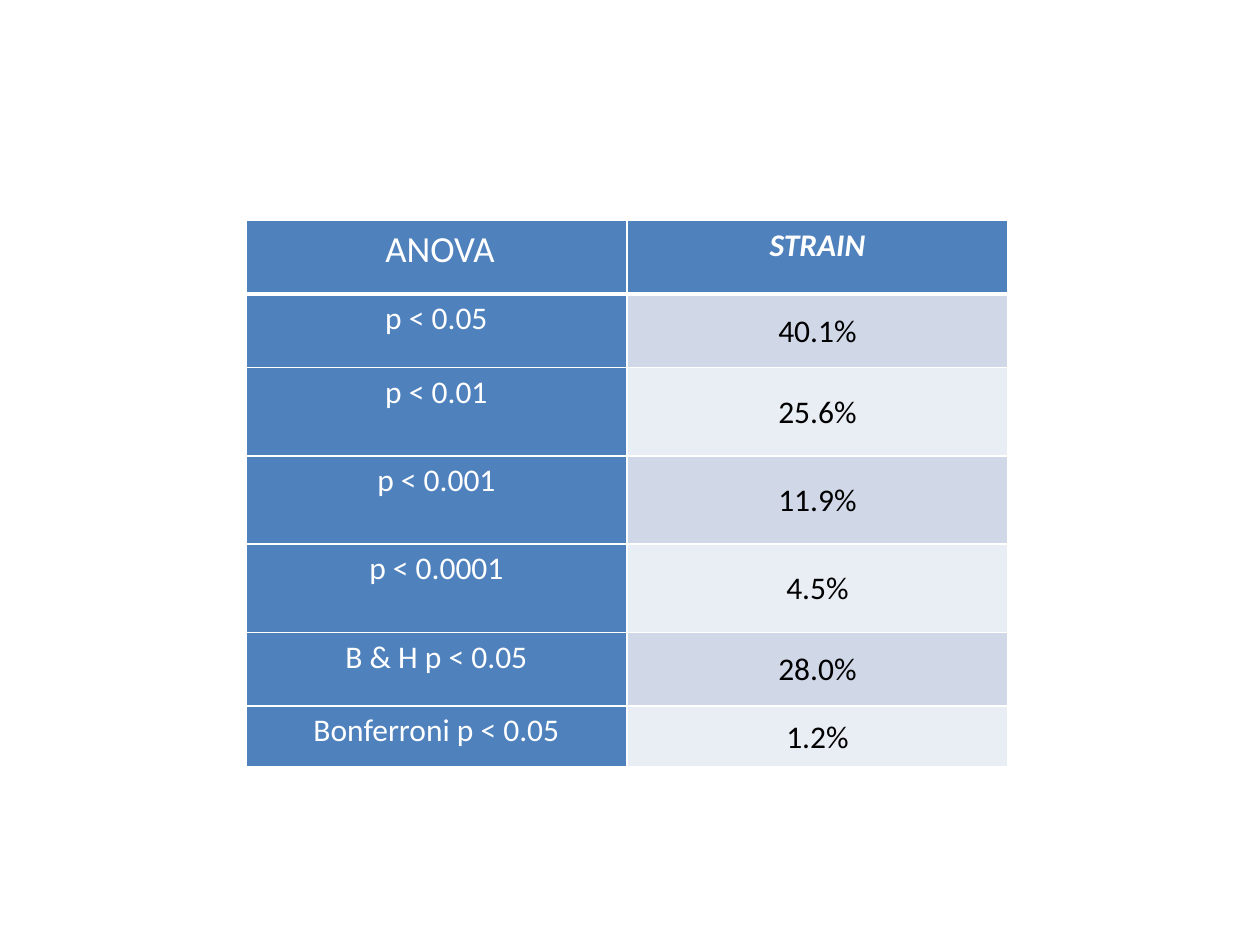
from dataclasses import dataclass

from lxml import etree
from pptx import Presentation
from pptx.dml.color import RGBColor
from pptx.enum.text import MSO_ANCHOR, PP_ALIGN
from pptx.oxml.ns import qn
from pptx.util import Pt

CENTER = PP_ALIGN.CENTER
TOP, MIDDLE = MSO_ANCHOR.TOP, MSO_ANCHOR.MIDDLE
BLANK_LAYOUT = 6


@dataclass(frozen=True)
class Theme:
    font: str = "Calibri"
    body_size: float = 18
    heading_size: float = 21
    light_text: str = "FFFFFF"
    dark_text: str = "000000"
    border: str = "FFFFFF"
    heading_fill: str = "4F81BD"
    bands: tuple = ("D0D8E8", "E9EDF4")


THEME = Theme()

RESULTS = [
    ("p < 0.05", "40.1%"),
    ("p < 0.01", "25.6%"),
    ("p < 0.001", "11.9%"),
    ("p < 0.0001", "4.5%"),
    ("B & H p < 0.05", "28.0%"),
    ("Bonferroni p < 0.05", "1.2%"),
]
ROW_HEIGHTS = [42, 42, 50.5, 50.5, 50.5, 42, 35]
COLUMN_WIDTH = 217.75
TABLE_LEFT, TABLE_TOP = 140.5, 126


def add_run(paragraph, text, color, size=THEME.body_size, emphasis=False):
    run = paragraph.add_run()
    run.text = text
    run.font.name = THEME.font
    run.font.size = Pt(size)
    run.font.bold = run.font.italic = emphasis
    run.font.color.rgb = RGBColor.from_string(color)


def set_borders(cell, bottom):
    properties = cell._tc.get_or_add_tcPr()
    for side, width in (("L", 1), ("R", 1), ("T", 1), ("B", bottom)):
        line = etree.SubElement(properties, qn(f"a:ln{side}"), w=str(Pt(width)))
        fill = etree.SubElement(line, qn("a:solidFill"))
        etree.SubElement(fill, qn("a:srgbClr"), val=THEME.border)


def style_cell(cell, fill, anchor, side_inset, top_inset, bottom_border=1):
    set_borders(cell, bottom_border)
    cell.fill.solid()
    cell.fill.fore_color.rgb = RGBColor.from_string(fill)
    cell.vertical_anchor = anchor
    cell.margin_left = cell.margin_right = Pt(side_inset)
    cell.margin_top, cell.margin_bottom = Pt(top_inset), Pt(0)
    paragraph = cell.text_frame.paragraphs[0]
    paragraph.alignment = CENTER
    return paragraph


def heading_paragraph(cell, bottom_border=1):
    paragraph = style_cell(cell, THEME.heading_fill, TOP, 5, 0, bottom_border)
    paragraph.line_spacing = 1.15
    return paragraph


def fill_header(table):
    anova = heading_paragraph(table.cell(0, 0), 3)
    add_run(anova, " ", THEME.dark_text)
    add_run(anova, "ANOVA", THEME.light_text, THEME.heading_size)
    strain = heading_paragraph(table.cell(0, 1), 3)
    add_run(strain, "STRAIN", THEME.light_text, emphasis=True)


def fill_results(table):
    for row, (threshold, share) in enumerate(RESULTS, start=1):
        add_run(heading_paragraph(table.cell(row, 0)), threshold, THEME.light_text)
        band = THEME.bands[(row - 1) % 2]
        value = style_cell(table.cell(row, 1), band, MIDDLE, 0.75, 0.75)
        add_run(value, share, THEME.dark_text)


def add_anova_table(slide):
    table = slide.shapes.add_table(
        len(ROW_HEIGHTS), 2, Pt(TABLE_LEFT), Pt(TABLE_TOP),
        Pt(2 * COLUMN_WIDTH), Pt(sum(ROW_HEIGHTS)),
    ).table
    for column in table.columns:
        column.width = Pt(COLUMN_WIDTH)
    for row, height in zip(table.rows, ROW_HEIGHTS):
        row.height = Pt(height)
    fill_header(table)
    fill_results(table)


def main():
    deck = Presentation()
    deck.slide_width, deck.slide_height = Pt(720), Pt(540)
    slide = deck.slides.add_slide(deck.slide_layouts[BLANK_LAYOUT])
    add_anova_table(slide)
    deck.save("out.pptx")


if __name__ == "__main__":
    main()
